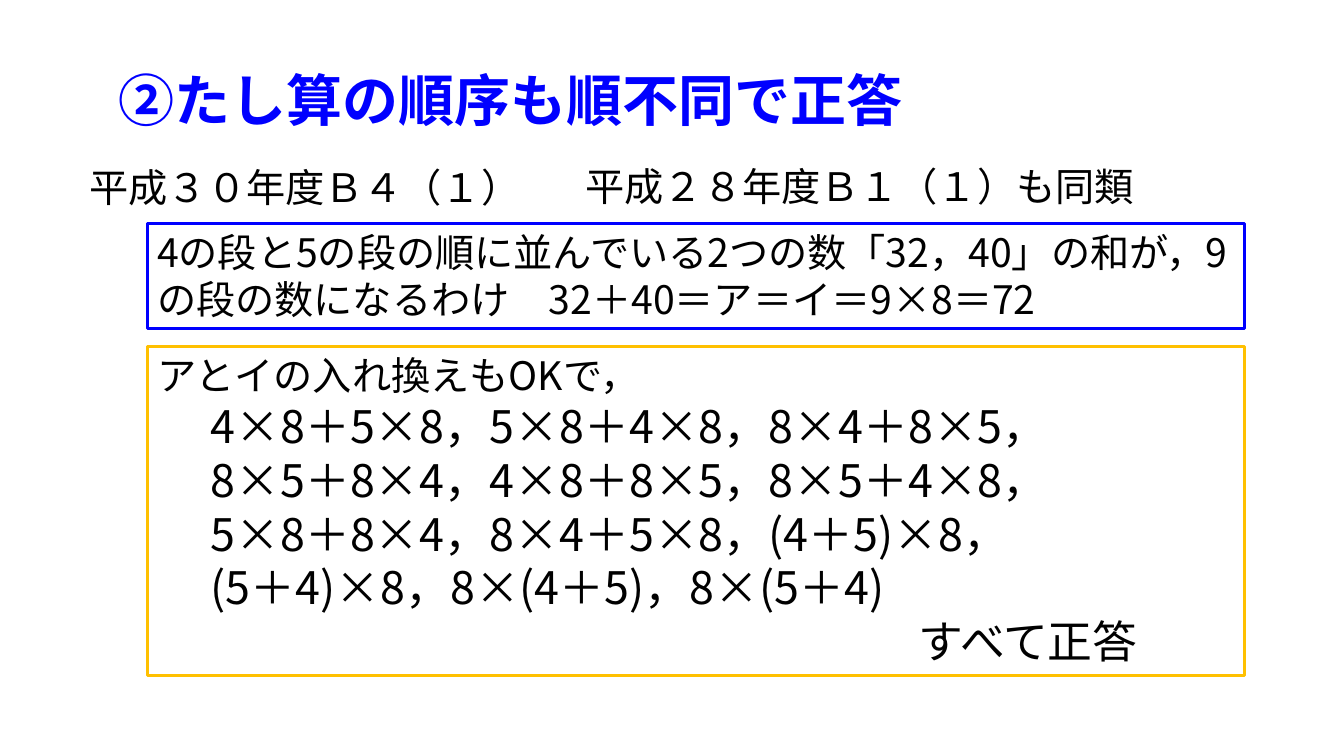
from pptx import Presentation
from pptx.dml.color import RGBColor
from pptx.enum.shapes import MSO_SHAPE
from pptx.enum.text import MSO_ANCHOR, PP_ALIGN
from pptx.oxml.ns import qn
from pptx.util import Inches, Pt
from lxml import etree

RECTANGLE = MSO_SHAPE.RECTANGLE
TOP = MSO_ANCHOR.TOP
LEFT = PP_ALIGN.LEFT
COLORS = {"blue": "0000FF", "amber": "FFC000", "black": "000000"}
SERIF = "TeX Gyre Schola"
SANS = "Noto Sans CJK JP"


class AnswerSlide:
    """Holds the style and the slide, and adds labels and framed boxes."""

    def __init__(self, slide):
        self.slide = slide

    def fill_text(self, frame, lines, font, color="black", bold=False, wrap=True):
        for name, value in {"word_wrap": wrap, "vertical_anchor": TOP}.items():
            setattr(frame, name, value)
        for number, (text, size, indent) in enumerate(lines):
            paragraph = frame.add_paragraph() if number else frame.paragraphs[0]
            paragraph.alignment = LEFT
            if indent:
                properties = paragraph._p.get_or_add_pPr()
                properties.set("marL", str(Inches(indent)))
                properties.set("indent", "0")
            run = paragraph.add_run()
            run.text = text
            for name, value in {"name": font, "size": Pt(size), "bold": bold}.items():
                setattr(run.font, name, value)
            run.font.color.rgb = RGBColor.from_string(COLORS[color])
            east_asian = etree.SubElement(run._r.get_or_add_rPr(), qn("a:ea"))
            east_asian.set("typeface", SANS)

    def label(self, place, text, size=28, **style):
        box = self.slide.shapes.add_textbox(*map(Inches, place))
        self.fill_text(box.text_frame, [(text, size, 0)], SERIF, **style)

    def framed(self, top, height, lines, border):
        box = self.slide.shapes.add_shape(
            RECTANGLE, *map(Inches, (1.46, top, 10.88, height)))
        box.shadow.inherit = False
        box.fill.background()
        box.line.color.rgb = RGBColor.from_string(COLORS[border])
        box.line.width = Pt(2.25)
        self.fill_text(box.text_frame, lines, SANS)


def main():
    deck = Presentation()
    deck.slide_width, deck.slide_height = Inches(13.33), Inches(7.5)
    answers = AnswerSlide(deck.slides.add_slide(deck.slide_layouts[6]))

    answers.label((1.08, 0.6, 8.06, 0.77), "②たし算の順序も順不同で正答",
                  size=40, color="blue", bold=True, wrap=False)
    answers.label((0.79, 1.57, 4.58, 0.57), "平成３０年度Ｂ４（１）")

    question = ("4の段と5の段の順に並んでいる2つの数「32，40」の和が，"
                "9の段の数になるわけ　32＋40＝ア＝イ＝9×8＝72")
    answers.framed(2.22, 1.04, [(question, 28, 0)], "blue")

    expressions = [
        "4×8＋5×8，5×8＋4×8，8×4＋8×5，",
        "8×5＋8×4，4×8＋8×5，8×5＋4×8，",
        "5×8＋8×4，8×4＋5×8，(4＋5)×8，",
        "(5＋4)×8，8×(4＋5)，8×(5＋4)",
    ]
    accepted = [("アとイの入れ換えもOKで，", 28, 0)]
    accepted += [(expression, 32, 0.53) for expression in expressions]
    accepted.append(("すべて正答", 32, 7.55))
    answers.framed(3.44, 3.26, accepted, "amber")

    answers.label((5.71, 1.56, 6.04, 0.57), "平成２８年度Ｂ１（１）も同類")
    deck.save("out.pptx")


if __name__ == "__main__":
    main()
